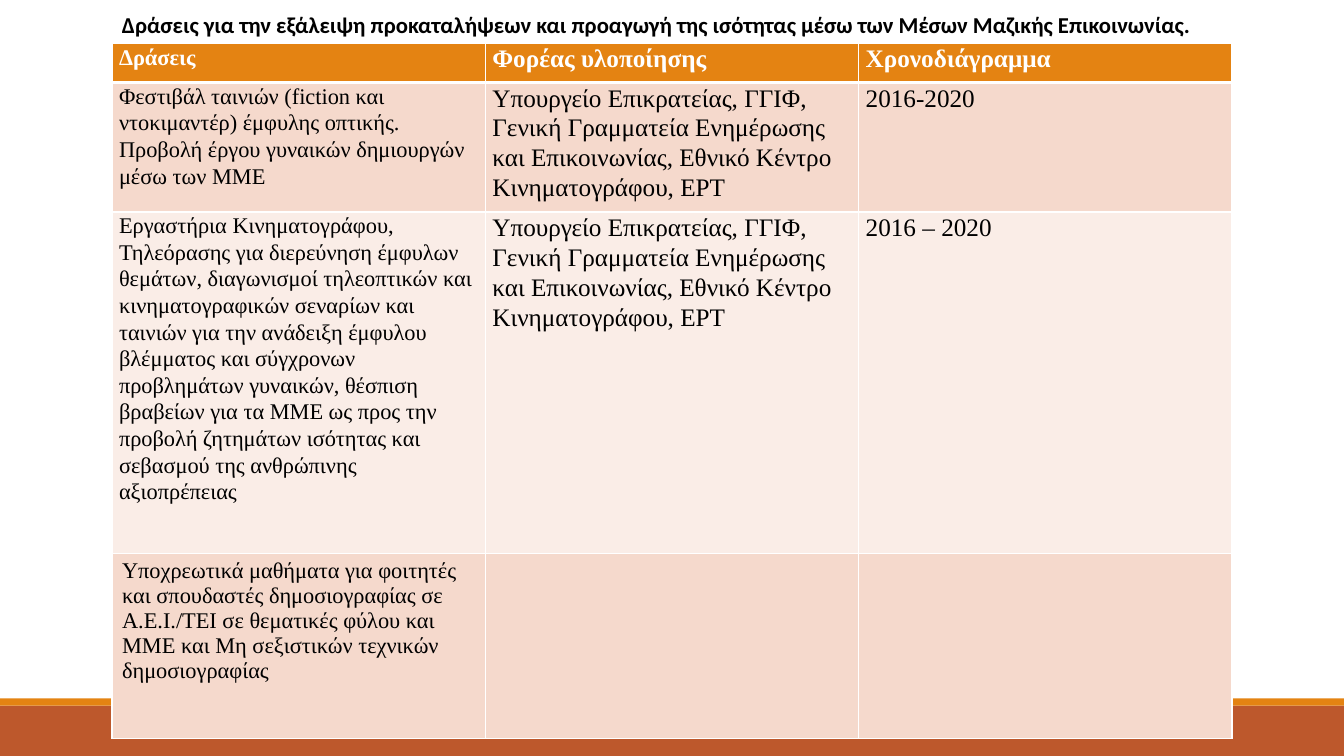
from lxml import etree
from pptx import Presentation
from pptx.dml.color import RGBColor
from pptx.enum.shapes import MSO_SHAPE
from pptx.enum.text import MSO_ANCHOR, PP_ALIGN
from pptx.oxml.ns import qn
from pptx.util import Inches, Pt

RECTANGLE = MSO_SHAPE.RECTANGLE
BOTTOM = MSO_ANCHOR.BOTTOM
LEFT, JUSTIFY = PP_ALIGN.LEFT, PP_ALIGN.JUSTIFY

COLORS = {
    "white": "FFFFFF", "black": "000000", "orange": "E48312",
    "rust": "BD582C", "peach": "F5D9CC", "blush": "FAEDE7",
}
WIDTH, HEIGHT = 13.33, 7.5
COLUMNS, ROWS = 12, 75

TITLE = ("Δράσεις για την εξάλειψη προκαταλήψεων και προαγωγή της ισότητας "
         "μέσω των Μέσων Μαζικής Επικοινωνίας.")
HEADINGS = ["Δράσεις", "Φορέας υλοποίησης", "Χρονοδιάγραμμα"]
AGENCIES = ("Υπουργείο Επικρατείας, ΓΓΙΦ, Γενική Γραμματεία Ενημέρωσης και "
            "Επικοινωνίας, Εθνικό Κέντρο Κινηματογράφου, ΕΡΤ")
FESTIVAL = ("Φεστιβάλ ταινιών (fiction και ντοκιμαντέρ) έμφυλης οπτικής. "
            "Προβολή έργου γυναικών δημιουργών μέσω των ΜΜΕ")
WORKSHOPS = ("Εργαστήρια Κινηματογράφου, Τηλεόρασης για διερεύνηση έμφυλων "
             "θεμάτων, διαγωνισμοί τηλεοπτικών και κινηματογραφικών σεναρίων "
             "και ταινιών για την ανάδειξη έμφυλου βλέμματος και σύγχρονων "
             "προβλημάτων γυναικών, θέσπιση βραβείων για τα ΜΜΕ ως προς την "
             "προβολή ζητημάτων ισότητας και σεβασμού της ανθρώπινης "
             "αξιοπρέπειας")
COURSES = ("Υποχρεωτικά μαθήματα για φοιτητές και σπουδαστές δημοσιογραφίας "
           "σε Α.Ε.Ι./ΤΕΙ σε θεματικές φύλου και ΜΜΕ και Μη σεξιστικών "
           "τεχνικών δημοσιογραφίας")
ACTIONS = [
    HEADINGS,
    [FESTIVAL, AGENCIES, "2016-2020"],
    [WORKSHOPS, AGENCIES, "2016 – 2020"],
    [COURSES, "", ""],
]
ROW_HEIGHTS = [3.9, 12.2, 33.9, 18.3]
ROW_FILLS = ["orange", "peach", "blush", "peach"]


class ActionSlide:
    """Draws styled elements on one slide, placed by grid columns and rows."""

    def __init__(self, deck):
        self.slide = deck.slides.add_slide(deck.slide_layouts[6])

    def across(self, columns):
        return Inches(WIDTH * columns / COLUMNS)

    def down(self, rows):
        return Inches(HEIGHT * rows / ROWS)

    def area(self, column, row, columns, rows):
        return (self.across(column), self.down(row),
                self.across(columns), self.down(rows))

    def color(self, name):
        return RGBColor.from_string(COLORS[name])

    def band(self, row, rows, fill):
        band = self.slide.shapes.add_shape(
            RECTANGLE, *self.area(0, row, COLUMNS, rows))
        band.shadow.inherit = False
        band.fill.solid()
        band.fill.fore_color.rgb = self.color(fill)
        band.line.fill.background()

    def add_text(self, paragraph, text, size, font, color="black", bold=False):
        run = paragraph.add_run()
        run.text = text
        run.font.size = Pt(size)
        run.font.name = font
        run.font.bold = bold
        run.font.color.rgb = self.color(color)

    def title(self, text, *place):
        frame = self.slide.shapes.add_textbox(*self.area(*place)).text_frame
        frame.word_wrap = True
        frame.vertical_anchor = BOTTOM
        heading = frame.paragraphs[0]
        heading.line_spacing = 0.85
        self.add_text(heading, text, 16.2, "Calibri", bold=True)

    def border(self, cell, side, width):
        line = etree.SubElement(cell._tc.get_or_add_tcPr(), qn(f"a:{side}"),
                                w=str(Pt(width)))
        fill = etree.SubElement(line, qn("a:solidFill"))
        etree.SubElement(fill, qn("a:srgbClr"), val=COLORS["white"])

    def cell(self, cell, text, row, column):
        header, closing = row == 0, row == len(ACTIONS) - 1
        for side in ("lnL", "lnR", "lnT", "lnB"):
            thick = (header and side == "lnB") or (row == 1 and side == "lnT")
            self.border(cell, side, 3 if thick else 1)
        cell.fill.solid()
        cell.fill.fore_color.rgb = self.color(ROW_FILLS[row])
        if not text:
            return
        paragraph = cell.text_frame.paragraphs[0]
        if not closing:
            cell.margin_left = cell.margin_right = Inches(0.07)
            cell.margin_top = cell.margin_bottom = 0
            paragraph.line_spacing = 1.07
            paragraph.space_after = Pt(8)
            paragraph.alignment = JUSTIFY if header or column == 2 else LEFT
        self.add_text(paragraph, text, 16 if column == 0 else 18,
                      "Times New Roman", "white" if header else "black", header)

    def table(self, content, *place):
        table = self.slide.shapes.add_table(
            len(content), len(content[0]), *self.area(*place)).table
        for row, texts in enumerate(content):
            table.rows[row].height = self.down(ROW_HEIGHTS[row])
            for column, text in enumerate(texts):
                self.cell(table.cell(row, column), text, row, column)


def main():
    deck = Presentation()
    deck.slide_width, deck.slide_height = Inches(WIDTH), Inches(HEIGHT)
    page = ActionSlide(deck)
    page.band(70, 5, "rust")
    page.band(69.3, 0.7, "orange")
    page.title(TITLE, 1, 0, 10, 4.3)
    page.table(ACTIONS, 1, 4.3, 10, sum(ROW_HEIGHTS))
    deck.save("out.pptx")


if __name__ == "__main__":
    main()
